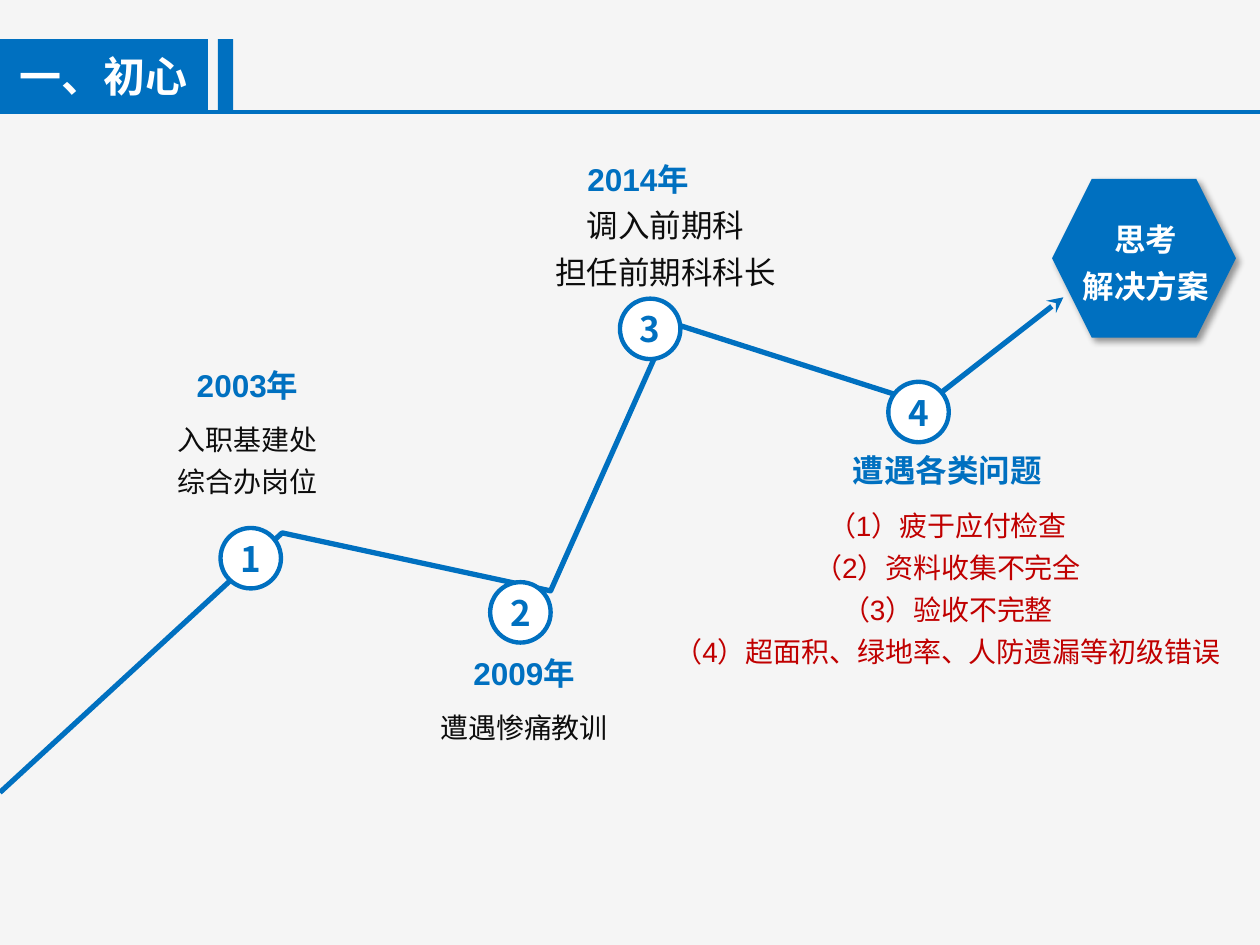
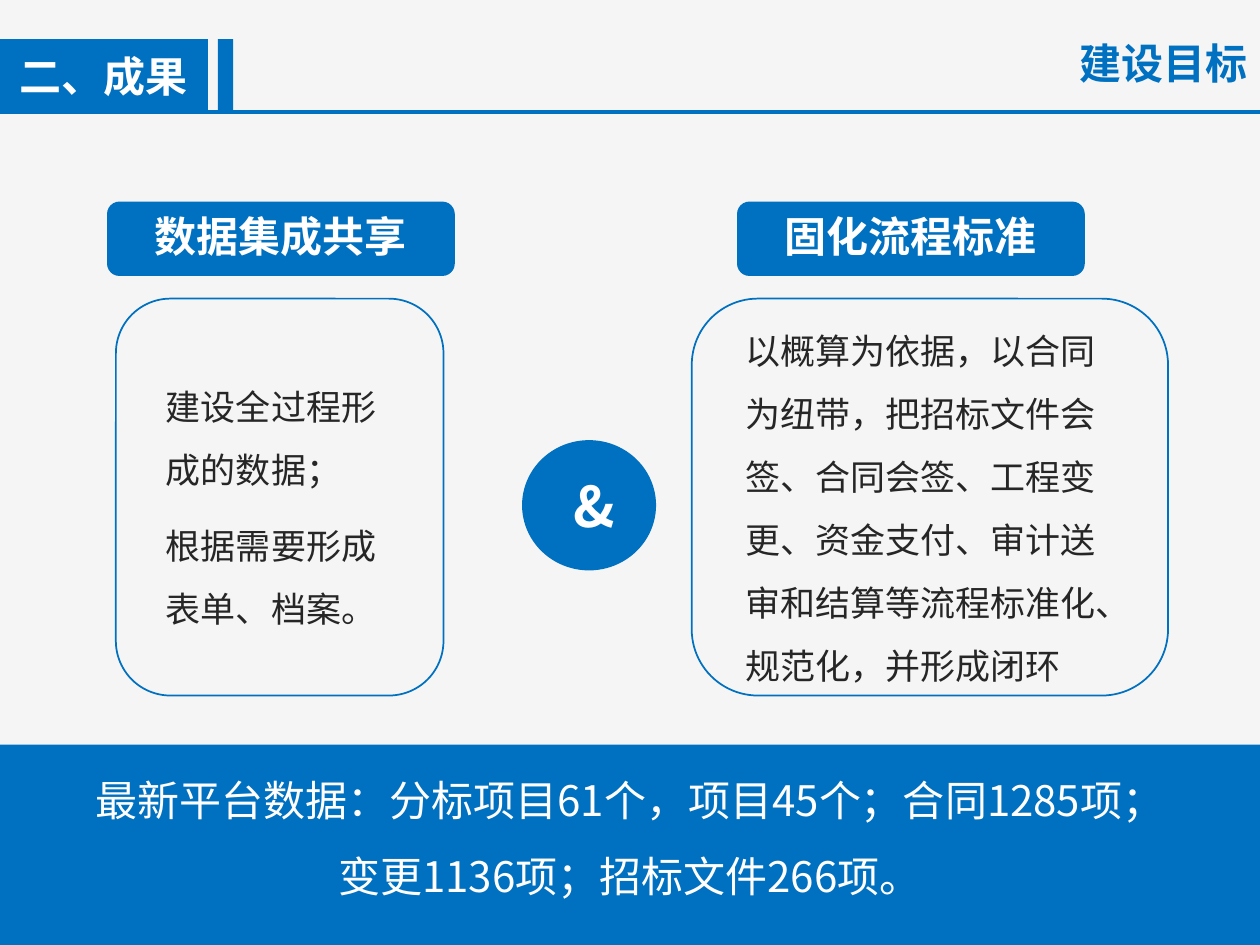
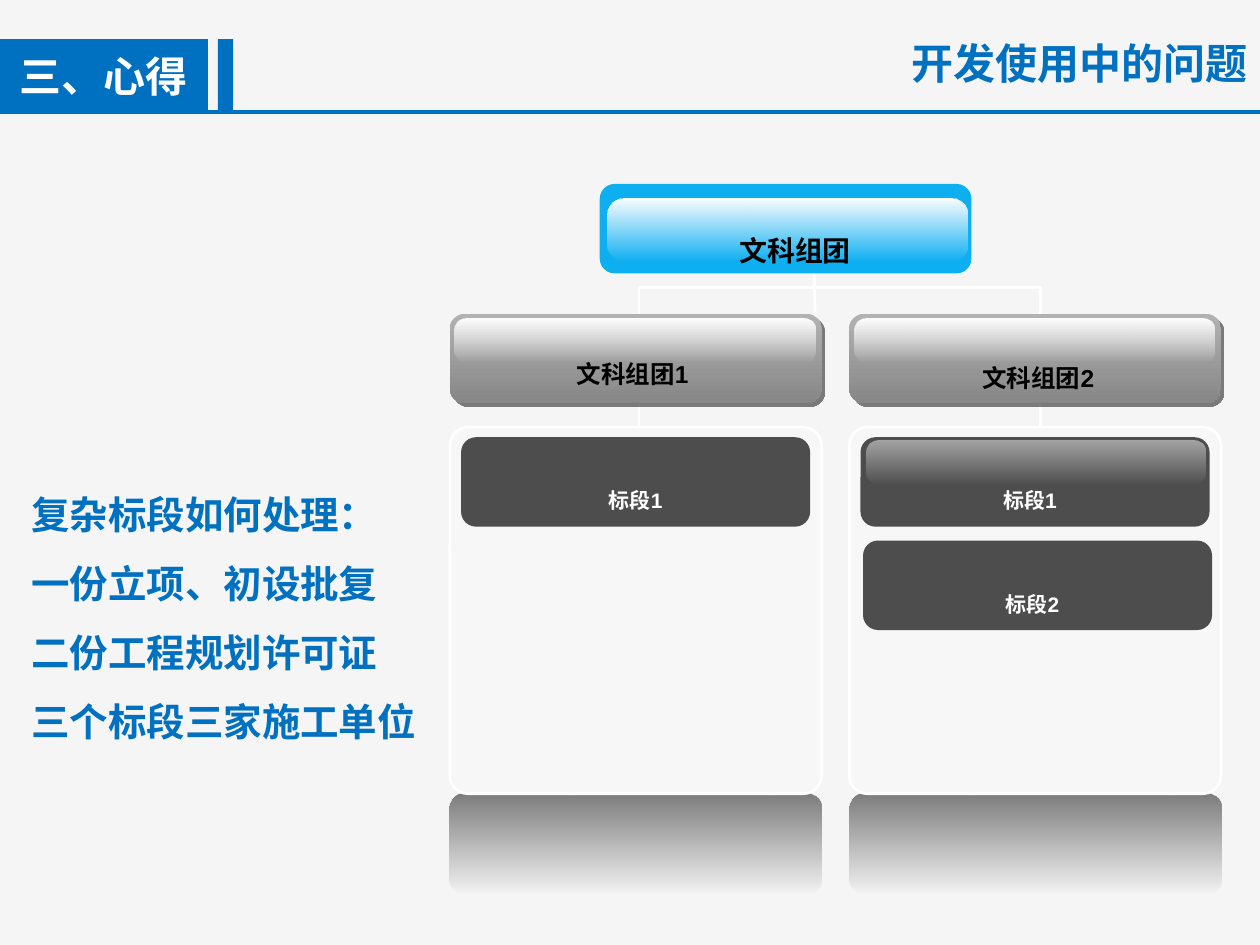
from lxml import etree
from pptx import Presentation
from pptx.dml.color import RGBColor
from pptx.enum.shapes import MSO_CONNECTOR, MSO_SHAPE
from pptx.enum.text import MSO_ANCHOR, MSO_AUTO_SIZE, PP_ALIGN
from pptx.oxml.ns import qn
from pptx.util import Inches, Pt

RECT, ROUND = MSO_SHAPE.RECTANGLE, MSO_SHAPE.ROUNDED_RECTANGLE
OVAL, HEXAGON = MSO_SHAPE.OVAL, MSO_SHAPE.HEXAGON
STRAIGHT = MSO_CONNECTOR.STRAIGHT
TOP, MIDDLE = MSO_ANCHOR.TOP, MSO_ANCHOR.MIDDLE
LEFT, CENTER, RIGHT = PP_ALIGN.LEFT, PP_ALIGN.CENTER, PP_ALIGN.RIGHT
FIXED = MSO_AUTO_SIZE.NONE

BLUE, WHITE, BLACK, PAPER = "0070C0", "FFFFFF", "000000", "F5F5F5"
INK, BODY_INK, RED = "0D0D0D", "262626", "C00000"
SKY, CHARCOAL, SILVER, GRAY = "0DAFF1", "4D4D4D", "B2B2B2", "878787"
ARIAL, NOTO, NOTO_JP = "Arial", "Noto Sans CJK SC", "Noto Sans CJK JP"


def rgb(value):
    return RGBColor.from_string(value)


def add_xml(parent, tag, **attrs):
    return etree.SubElement(parent, qn(tag), {k: str(v) for k, v in attrs.items()})


def add_color(parent, color, opacity):
    clr = add_xml(parent, "a:srgbClr", val=color)
    add_xml(clr, "a:alpha", val=opacity * 1000)


class Deck:
    def __init__(self):
        self.prs = Presentation()
        self.prs.slide_width, self.prs.slide_height = Inches(10), Inches(7.5)
        fill = self.prs.slide_master.background.fill
        fill.solid()
        fill.fore_color.rgb = rgb(PAPER)

    def new_slide(self, section, topic=None):
        self.slide = self.prs.slides.add_slide(self.prs.slide_layouts[1])
        self.shapes = self.slide.shapes
        self.line((0, 0.89), (10, 0.89), BLUE, 2)
        title = self.place(self.shapes.title, (0, 0.31, 1.65, 0.58))
        self.paint(title, BLUE)
        self.set_text(title, [section], 24, WHITE, bold=True, anchor=MIDDLE)
        self.shape(RECT, (1.73, 0.31, 0.12, 0.58), BLUE)
        if topic:
            self.text((5.36, 0.25, 4.64, 0.5), [topic], 24, BLUE, bold=True, align=RIGHT)

    def place(self, sp, box):
        for name, value in zip(("left", "top", "width", "height"), box):
            setattr(sp, name, Inches(value))
        return sp

    def paint(self, sp, color):
        sp.fill.solid()
        sp.fill.fore_color.rgb = rgb(color)

    def outline(self, sp, color, width):
        sp.line.color.rgb = rgb(color)
        sp.line.width = Pt(width)

    def set_text(self, sp, lines, size, color, bold=False, font=ARIAL, align=CENTER,
                 spacing=1, after=0, anchor=TOP, insets=(0.1, 0.05, 0.1, 0.05)):
        tf = sp.text_frame
        sides = ("margin_left", "margin_top", "margin_right", "margin_bottom")
        frame = {"word_wrap": True, "auto_size": FIXED, "vertical_anchor": anchor,
                 **{side: Inches(v) for side, v in zip(sides, insets)}}
        for name, value in frame.items():
            setattr(tf, name, value)
        para = {"alignment": align, "line_spacing": spacing,
                "space_before": Pt(0), "space_after": Pt(after)}
        for i, line in enumerate(lines):
            p = tf.add_paragraph() if i else tf.paragraphs[0]
            for name, value in para.items():
                setattr(p, name, value)
            r = p.add_run()
            r.text = line
            for name, value in {"size": Pt(size), "bold": bold, "name": font}.items():
                setattr(r.font, name, value)
            r.font.color.rgb = rgb(color)
            add_xml(r._r.get_or_add_rPr(), "a:ea", typeface=NOTO if font == ARIAL else font)

    def text(self, box, lines, size, color, **fmt):
        sp = self.shapes.add_textbox(*map(Inches, box))
        self.set_text(sp, lines, size, color, **fmt)

    def body(self, box, lines, size, color, **fmt):
        """Fill the body placeholder without bullets and bring it to the front."""
        sp = self.place(self.slide.placeholders[1], box)
        self.set_text(sp, lines, size, color, **fmt)
        for p in sp.text_frame.paragraphs:
            pPr = p._p.get_or_add_pPr()
            pPr.set("marL", "0")
            pPr.set("indent", "0")
            add_xml(pPr, "a:buNone")
        self.shapes._spTree.append(sp._element)

    def shape(self, kind, box, fill, line=None, width=1, adj=None):
        sp = self.shapes.add_shape(kind, *map(Inches, box))
        sp.shadow.inherit = False
        if adj is not None:
            sp.adjustments[0] = adj
        self.paint(sp, fill)
        if line:
            self.outline(sp, line, width)
        else:
            sp.line.fill.background()
        return sp

    def gradient(self, box, start, end, adj=None):
        """Rounded box fading downwards between two (colour, opacity) stops."""
        sp = self.shape(ROUND, box, start[0], adj=adj)
        solid = sp._element.spPr.find(qn("a:solidFill"))
        grad = etree.Element(qn("a:gradFill"), rotWithShape="1")
        stops = add_xml(grad, "a:gsLst")
        for pos, stop in ((0, start), (100000, end)):
            add_color(add_xml(stops, "a:gs", pos=pos), *stop)
        add_xml(grad, "a:lin", ang=90 * 60000, scaled=0)
        solid.getparent().replace(solid, grad)
        return sp

    def gloss(self, box, opacity=100):
        self.gradient(box, (WHITE, opacity), (WHITE, 0), 0.26)

    def shadow(self, sp, opacity, blur, dist):
        effects = sp._element.spPr.find(qn("a:effectLst"))
        shadow = add_xml(effects, "a:outerShdw", blurRad=Pt(blur), dist=Pt(dist),
                         dir=45 * 60000, algn="tl", rotWithShape=0)
        add_color(shadow, BLACK, opacity)

    def line(self, start, end, color, width):
        cn = self.shapes.add_connector(STRAIGHT, *map(Inches, start + end))
        self.outline(cn, color, width)
        add_xml(cn._element.spPr, "a:effectLst")

    def polyline(self, points, color, width, arrow=False):
        pts = [(Inches(x), Inches(y)) for x, y in points]
        builder = self.shapes.build_freeform(*pts[0])
        builder.add_line_segments(pts[1:], close=False)
        sp = builder.convert_to_shape()
        sp.shadow.inherit = False
        sp.fill.background()
        self.outline(sp, color, width)
        if arrow:
            ln = sp._element.spPr.find(qn("a:ln"))
            add_xml(ln, "a:tailEnd", type="stealth")


def build_journey(deck):
    deck.new_slide("一、初心")
    deck.polyline([(0, 6.29), (2.24, 4.23), (4.37, 4.69), (5.32, 2.56),
                   (7.35, 3.21), (8.44, 2.36)], BLUE, 3, arrow=True)
    stops = [(1.75, 4.19), (3.89, 4.62), (4.92, 2.37), (7.05, 3.03)]
    for number, (x, y) in enumerate(stops, 1):
        sp = deck.shape(OVAL, (x, y, 0.48, 0.48), WHITE, BLUE, 2.5)
        deck.set_text(sp, [str(number)], 20, BLUE, bold=True, font=NOTO,
                      anchor=MIDDLE, insets=(0, 0, 0, 0))
    headings = [("2003年", 0.5, 2.86, 2.93), ("2009年", 2.9, 5.14, 2.52),
                ("2014年", 3.6, 1.22, 2.93), ("遭遇各类问题", 5.22, 3.53, 4.6)]
    for heading, x, y, w in headings:
        deck.text((x, y, w, 0.4), [heading], 18, BLUE, bold=True)
    events = [((0.5, 3.24, 2.93, 0.77), ["入职基建处", "综合办岗位"], 16),
              ((2.9, 5.52, 2.52, 0.41), ["遭遇惨痛教训"], 16),
              ((3.92, 1.51, 2.72, 0.86), ["调入前期科", "担任前期科科长"], 18)]
    for box, lines, size in events:
        deck.text(box, lines, size, INK, spacing=1.25)
    deck.body((5.22, 3.92, 4.6, 1.45),
              ["（1）疲于应付检查", "（2）资料收集不完全", "（3）验收不完整",
               "（4）超面积、绿地率、人防遗漏等初级错误"], 16, RED, spacing=1.25)
    deck.shadow(deck.shape(HEXAGON, (8.35, 1.42, 1.46, 1.26), BLUE), 40, 4, 3)
    deck.text((8.38, 1.62, 1.43, 0.82), ["思考", "解决方案"], 18, WHITE,
              bold=True, spacing=1.25)


def build_goals(deck):
    deck.new_slide("二、成果", "建设目标")
    goals = [(0.85, "数据集成共享", 0.92, 2.6,
              ["建设全过程形成的数据；", "根据需要形成表单、档案。"]),
             (5.85, "固化流程标准", 5.49, 3.78,
              ["以概算为依据，以合同为纽带，把招标文件会签、合同会签、工程变更、"
               "资金支付、审计送审和结算等流程标准化、规范化，并形成闭环"])]
    fmt = {"font": NOTO, "anchor": MIDDLE, "insets": (0.27,) * 4}
    for head_x, heading, card_x, card_w, lines in goals:
        card = deck.shape(ROUND, (card_x, 2.37, card_w, 3.15), PAPER, BLUE)
        deck.set_text(card, lines, 20, BODY_INK, align=LEFT, spacing=1.5, after=7, **fmt)
        head = deck.shape(ROUND, (head_x, 1.6, 2.76, 0.59), BLUE)
        deck.set_text(head, [heading], 24, WHITE, bold=True, spacing=0.9, after=8, **fmt)
    deck.shape(OVAL, (4.15, 3.5, 1.05, 1.02), BLUE, BLUE)
    deck.text((3.98, 3.69, 1.47, 0.64), ["&"], 32, WHITE, bold=True, font=NOTO)
    deck.shape(RECT, (0, 5.91, 10, 1.59), BLUE)
    deck.body((0, 5.9, 10, 1.6),
              ["最新平台数据：分标项目61个，项目45个；合同1285项；",
               "变更1136项；招标文件266项。"], 24, WHITE, font=NOTO_JP, spacing=1.5)


def build_sections(deck):
    def label(x, y, w, text, size, color):
        deck.text((x, y, w, 0.49), [text], size, color, bold=True,
                  insets=(0.1, size * 0.0185, 0.1, 0))

    deck.new_slide("三、心得", "开发使用中的问题")
    columns = (3.57, 6.74)
    for x in columns:
        deck.gradient((x, 6.3, 2.95, 0.79), (BLACK, 50), (BLACK, 0), 0.14)
    deck.line((6.46, 1.97), (6.47, 2.54), WHITE, 1.5)
    deck.polyline([(5.07, 3.39), (5.07, 2.28), (8.26, 2.28), (8.26, 3.39)], WHITE, 1.5)

    deck.shape(ROUND, (4.76, 1.46, 2.95, 0.71), SKY)
    deck.gloss((4.82, 1.58, 2.86, 0.49))
    label(4.9, 1.56, 2.82, "文科组团", 16, BLACK)

    for x in columns:
        panel = deck.shape(ROUND, (x, 3.39, 2.95, 2.91), WHITE, WHITE, 1.5, adj=0.05)
        add_xml(panel._element.spPr.find(qn("a:solidFill"))[0], "a:alpha", val=25000)
        group = deck.gradient((x, 2.49, 2.95, 0.71), (SILVER, 100), (GRAY, 100))
        deck.shadow(group, 50, 0, 2.8)
        deck.gloss((x + 0.04, 2.53, 2.86, 0.34))
    label(3.61, 2.59, 2.82, "文科组团1", 14, BLACK)
    label(6.83, 2.62, 2.82, "文科组团2", 14, BLACK)

    for x, y in ((3.66, 3.47), (6.83, 3.47), (6.85, 4.29)):
        deck.shape(ROUND, (x, y, 2.77, 0.71), CHARCOAL)
    deck.gloss((6.88, 3.5, 2.69, 0.34), 50)
    for x, y, text in ((3.68, 3.65, "标段1"), (6.81, 3.65, "标段1"), (6.83, 4.47, "标段2")):
        label(x, y, 2.73, text, 12, WHITE)

    deck.body((0.15, 3.66, 3.26, 2.26),
              ["复杂标段如何处理：", "一份立项、初设批复", "二份工程规划许可证",
               "三个标段三家施工单位"], 22, BLUE, bold=True, align=LEFT, spacing=1.5)


def main():
    deck = Deck()
    build_journey(deck)
    build_goals(deck)
    build_sections(deck)
    deck.prs.save("out.pptx")


if __name__ == "__main__":
    main()
